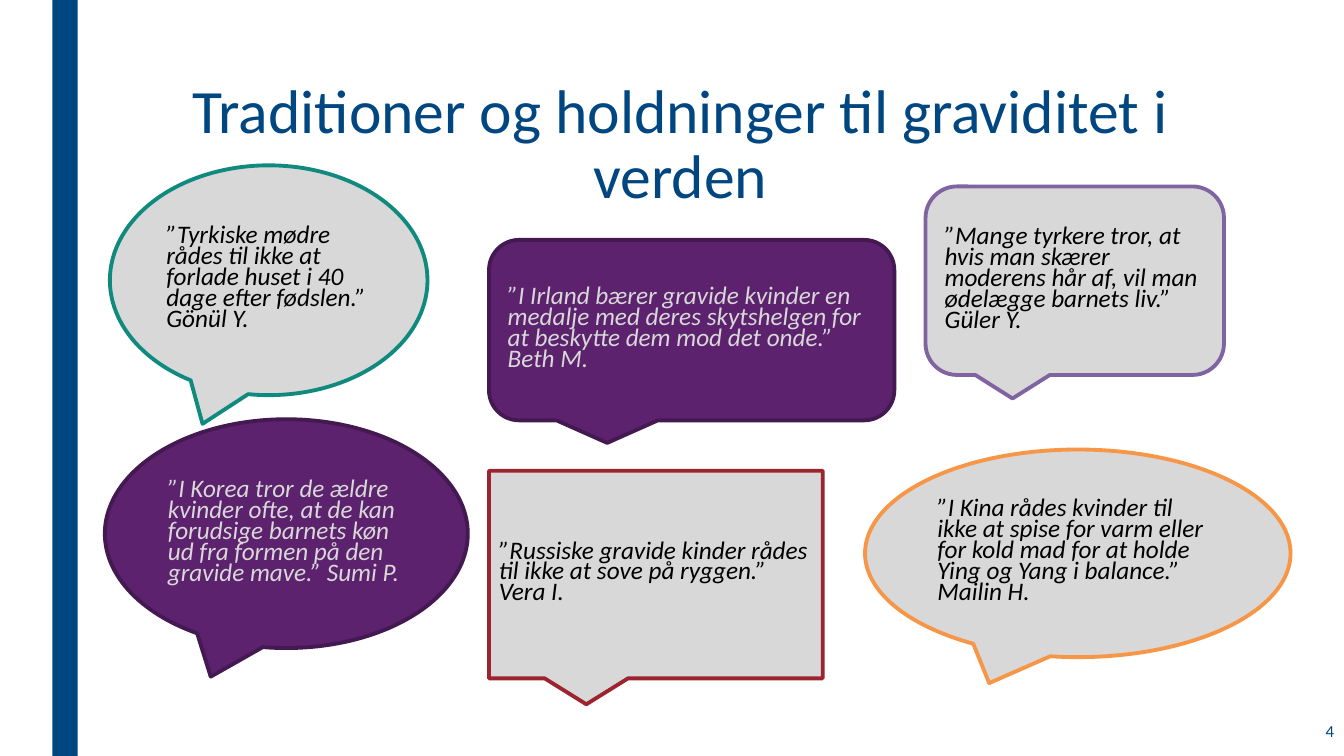
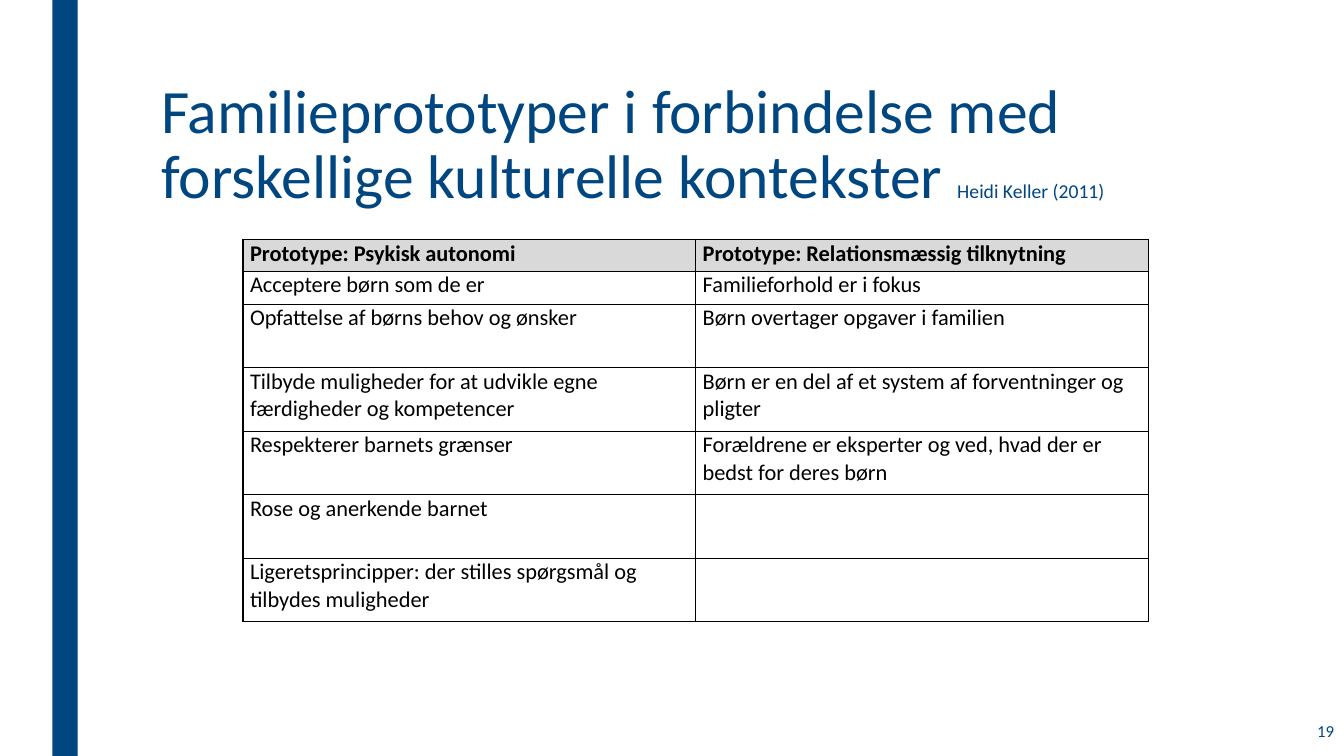
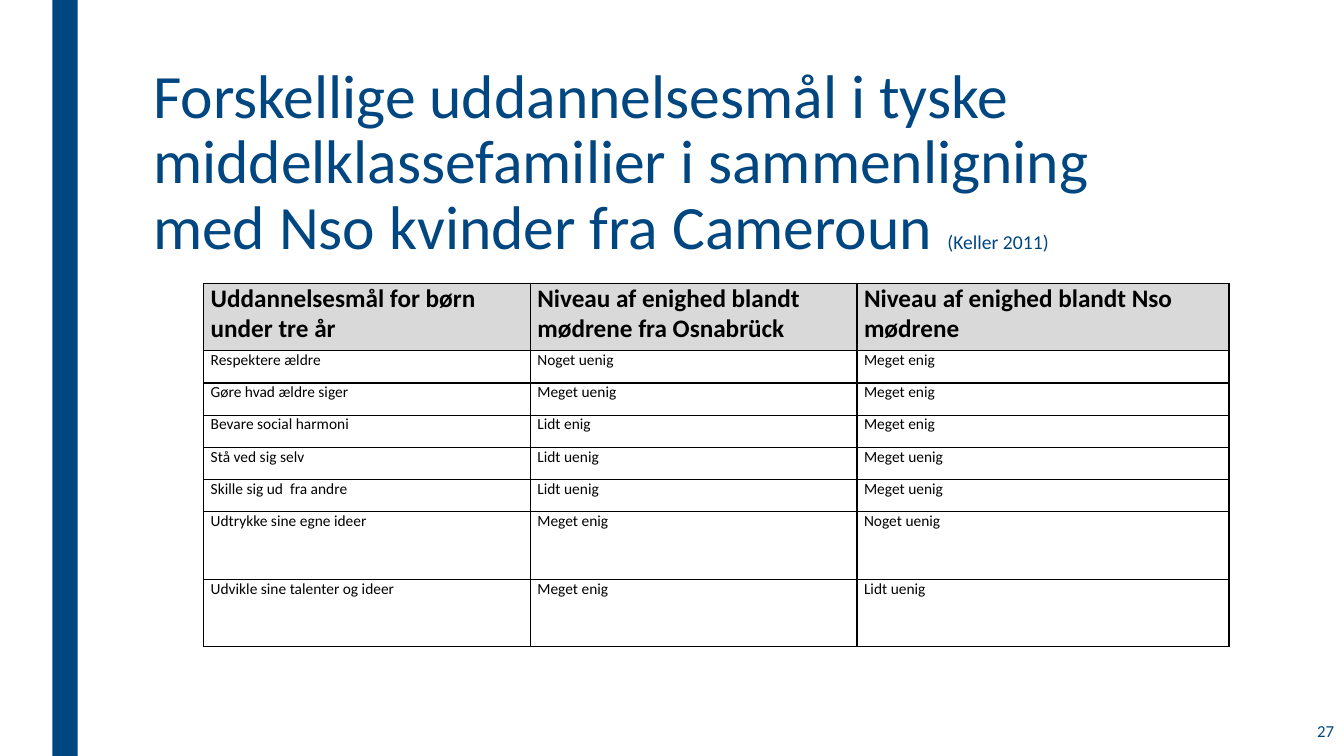
from dataclasses import dataclass

from lxml import etree
from pptx import Presentation
from pptx.dml.color import RGBColor
from pptx.enum.shapes import MSO_SHAPE
from pptx.enum.text import MSO_ANCHOR, PP_ALIGN
from pptx.oxml.ns import qn
from pptx.presentation import Presentation as Deck
from pptx.slide import Slide
from pptx.table import _Cell
from pptx.text.text import _Paragraph
from pptx.util import Emu, Pt

RECTANGLE = MSO_SHAPE.RECTANGLE
OVAL_BUBBLE = MSO_SHAPE.OVAL_CALLOUT
ROUND_BUBBLE = MSO_SHAPE.ROUNDED_RECTANGULAR_CALLOUT
SQUARE_BUBBLE = MSO_SHAPE.RECTANGULAR_CALLOUT
LEFT, CENTER, RIGHT = PP_ALIGN.LEFT, PP_ALIGN.CENTER, PP_ALIGN.RIGHT
TOP, MIDDLE = MSO_ANCHOR.TOP, MSO_ANCHOR.MIDDLE

EMU_PER_PX = 9144
SLIDE_WIDTH, SLIDE_HEIGHT = 1333, 750
BLANK_LAYOUT = 6

FONT = "Calibri"
NAVY = "004680"
BLACK = "000000"
LIGHT_GREY = "D8D8D8"
HEADER_GREY = "D9D9D9"
PURPLE = "5C226E"
DARK_PURPLE = "441951"
TITLE_SIZE, CITATION_SIZE, NUMBER_SIZE, QUOTE_SIZE = 44, 14, 12, 18


@dataclass(frozen=True)
class Box:
    left: int
    top: int
    width: int
    height: int

    def emu(self) -> tuple[Emu, Emu, Emu, Emu]:
        return px(self.left), px(self.top), px(self.width), px(self.height)


@dataclass(frozen=True)
class Bubble:
    outline: MSO_SHAPE
    box: Box
    fill: str
    border: str
    ink: str
    quote: str


@dataclass(frozen=True)
class Grid:
    left: int
    top: int
    columns: list[int]
    rows: list[int]
    header_size: int
    body_size: int
    texts: list[tuple[str, ...]]


NUMBER_BOX = Box(1158, 703, 175, 44)
BAND_BOX = Box(52, 0, 25, SLIDE_HEIGHT)

BUBBLES = [
    Bubble(OVAL_BUBBLE, Box(109, 164, 315, 228), LIGHT_GREY, "108A7E", BLACK,
           "”Tyrkiske mødre rådes til ikke at forlade huset i 40 dage efter fødslen.” Gönül Y."),
    Bubble(ROUND_BUBBLE, Box(918, 185, 296, 187), LIGHT_GREY, "8064A2", BLACK,
           "”Mange tyrkere tror, at hvis man skærer moderens hår af, vil man ødelægge barnets liv.” Güler Y."),
    Bubble(SQUARE_BUBBLE, Box(485, 467, 331, 206), LIGHT_GREY, "9D232F", BLACK,
           "”Russiske gravide kinder rådes til ikke at sove på ryggen.” Vera I."),
    Bubble(OVAL_BUBBLE, Box(858, 446, 422, 206), LIGHT_GREY, "F79646", BLACK,
           "”I Kina rådes kvinder til ikke at spise for varm eller for kold mad "
           "for at holde Ying og Yang i balance.” Mailin H."),
    Bubble(OVAL_BUBBLE, Box(104, 416, 360, 227), PURPLE, DARK_PURPLE, LIGHT_GREY,
           "”I Korea tror de ældre kvinder ofte, at de kan forudsige barnets køn "
           "ud fra formen på den gravide mave.” Sumi P."),
    Bubble(ROUND_BUBBLE, Box(485, 238, 402, 179), PURPLE, DARK_PURPLE, LIGHT_GREY,
           "”I Irland bærer gravide kvinder en medalje med deres skytshelgen "
           "for at beskytte dem mod det onde.” Beth M."),
]

PROTOTYPES = Grid(
    241, 238, [449] * 2, [31, 33] + [63] * 5, 16, 16,
    [
        ("Prototype: Psykisk autonomi", "Prototype: Relationsmæssig tilknytning"),
        ("Acceptere børn som de er", "Familieforhold er i fokus"),
        ("Opfattelse af børns behov og ønsker", "Børn overtager opgaver i familien"),
        ("Tilbyde muligheder for at udvikle egne færdigheder og kompetencer",
         "Børn er en del af et system af forventninger og pligter"),
        ("Respekterer barnets grænser",
         "Forældrene er eksperter og ved, hvad der er bedst for deres børn"),
        ("Rose og anerkende barnet", ""),
        ("Ligeretsprincipper: der stilles spørgsmål og tilbydes muligheder", ""),
    ],
)

EDUCATION_GOALS = Grid(
    202, 281, [324, 324, 369], [67] + [32] * 5 + [67] * 2, 18, 11,
    [
        ("Uddannelsesmål for børn under tre år",
         "Niveau af enighed blandt mødrene fra Osnabrück",
         "Niveau af enighed blandt Nso mødrene"),
        ("Respektere ældre", "Noget uenig", "Meget enig"),
        ("Gøre hvad ældre siger", "Meget uenig", "Meget enig"),
        ("Bevare social harmoni", "Lidt enig", "Meget enig"),
        ("Stå ved sig selv", "Lidt uenig", "Meget uenig"),
        ("Skille sig ud  fra andre", "Lidt uenig", "Meget uenig"),
        ("Udtrykke sine egne ideer", "Meget enig", "Noget uenig"),
        ("Udvikle sine talenter og ideer", "Meget enig", "Lidt uenig"),
    ],
)


def px(length: int) -> Emu:
    return Emu(length * EMU_PER_PX)


def rgb(color: str) -> RGBColor:
    return RGBColor.from_string(color)


def style(paragraph: _Paragraph, size: int, color: str, align: PP_ALIGN = LEFT,
          bold: bool = False, italic: bool = False) -> None:
    paragraph.alignment = align
    font = paragraph.font
    font.name, font.size = FONT, Pt(size)
    font.bold, font.italic = bold, italic
    font.color.rgb = rgb(color)


def add_text(slide: Slide, box: Box, anchor: MSO_ANCHOR) -> _Paragraph:
    frame = slide.shapes.add_textbox(*box.emu()).text_frame
    frame.word_wrap = True
    frame.vertical_anchor = anchor
    return frame.paragraphs[0]


def add_base(deck: Deck, number: int, title_box: Box, title: str,
             citation: str = "", align: PP_ALIGN = LEFT) -> Slide:
    slide = deck.slides.add_slide(deck.slide_layouts[BLANK_LAYOUT])
    band = slide.shapes.add_shape(RECTANGLE, *BAND_BOX.emu())
    band.shadow.inherit = False
    band.fill.solid()
    band.fill.fore_color.rgb = rgb(NAVY)
    band.line.fill.background()

    heading = add_text(slide, title_box, TOP)
    heading.line_spacing = 0.89
    style(heading, TITLE_SIZE, NAVY, align)
    heading.add_run().text = title
    if citation:
        source = heading.add_run()
        source.text = citation
        source.font.size = Pt(CITATION_SIZE)

    page = add_text(slide, NUMBER_BOX, MIDDLE)
    page.text = str(number)
    style(page, NUMBER_SIZE, NAVY, RIGHT)
    return slide


def add_bubble(slide: Slide, bubble: Bubble) -> None:
    shape = slide.shapes.add_shape(bubble.outline, *bubble.box.emu())
    shape.shadow.inherit = False
    shape.fill.solid()
    shape.fill.fore_color.rgb = rgb(bubble.fill)
    shape.line.color.rgb = rgb(bubble.border)
    shape.line.width = Pt(2.75)
    frame = shape.text_frame
    frame.word_wrap = True
    frame.vertical_anchor = MIDDLE
    quote = frame.paragraphs[0]
    quote.text = bubble.quote
    quote.line_spacing = Pt(15)
    style(quote, QUOTE_SIZE, bubble.ink, italic=True)


def add_borders(cell: _Cell) -> None:
    properties = cell._tc.get_or_add_tcPr()
    for side in ("a:lnL", "a:lnR", "a:lnT", "a:lnB"):
        border = etree.SubElement(properties, qn(side), w=str(Pt(1)))
        fill = etree.SubElement(border, qn("a:solidFill"))
        etree.SubElement(fill, qn("a:srgbClr"), val=BLACK)


def add_grid(slide: Slide, grid: Grid) -> None:
    box = Box(grid.left, grid.top, sum(grid.columns), sum(grid.rows))
    table = slide.shapes.add_table(len(grid.rows), len(grid.columns), *box.emu()).table
    table.first_row = table.horz_banding = False
    for column, width in zip(table.columns, grid.columns):
        column.width = px(width)
    for index, (row, height, texts) in enumerate(zip(table.rows, grid.rows, grid.texts)):
        row.height = px(height)
        is_header = index == 0
        for cell, text in zip(row.cells, texts):
            add_borders(cell)
            if is_header:
                cell.fill.solid()
                cell.fill.fore_color.rgb = rgb(HEADER_GREY)
            else:
                cell.fill.background()
            cell.margin_left = cell.margin_right = px(7)
            cell.margin_top = cell.margin_bottom = 0
            entry = cell.text_frame.paragraphs[0]
            entry.text = text
            style(entry, grid.header_size if is_header else grid.body_size,
                  BLACK, bold=is_header)


def main() -> None:
    deck = Presentation()
    deck.slide_width, deck.slide_height = px(SLIDE_WIDTH), px(SLIDE_HEIGHT)

    traditions = add_base(deck, 4, Box(150, 75, 1050, 162),
                          "Traditioner og holdninger til graviditet i verden", align=CENTER)
    for bubble in BUBBLES:
        add_bubble(traditions, bubble)

    families = add_base(deck, 19, Box(150, 75, 1154, 162),
                        "Familieprototyper i forbindelse med forskellige kulturelle kontekster ",
                        "Heidi Keller (2011)")
    add_grid(families, PROTOTYPES)

    goals = add_base(deck, 27, Box(142, 60, 1017, 230),
                     "Forskellige uddannelsesmål i tyske middelklassefamilier "
                     "i sammenligning med Nso kvinder fra Cameroun ",
                     "(Keller 2011)")
    add_grid(goals, EDUCATION_GOALS)

    deck.save("out.pptx")


if __name__ == "__main__":
    main()
